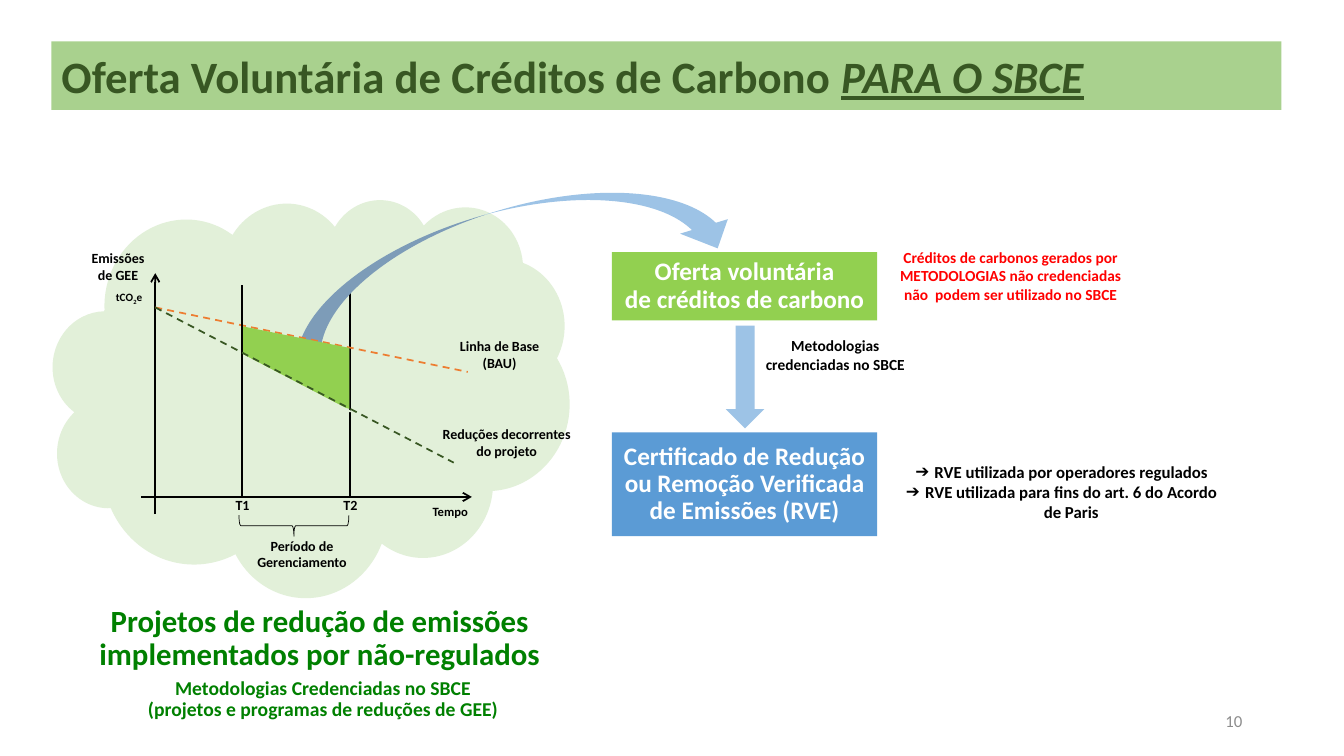
from lxml import etree
from pptx import Presentation
from pptx.dml.color import RGBColor
from pptx.enum.dml import MSO_LINE
from pptx.enum.shapes import MSO_CONNECTOR, MSO_SHAPE
from pptx.enum.text import MSO_ANCHOR, MSO_AUTO_SIZE, PP_ALIGN
from pptx.oxml.ns import qn
from pptx.util import Inches, Pt

LEFT, CENTER, RIGHT = PP_ALIGN.LEFT, PP_ALIGN.CENTER, PP_ALIGN.RIGHT
TOP, MIDDLE = MSO_ANCHOR.TOP, MSO_ANCHOR.MIDDLE
DASH = MSO_LINE.DASH
RECT, CLOUD, TRIANGLE = MSO_SHAPE.RECTANGLE, MSO_SHAPE.CLOUD, MSO_SHAPE.ISOSCELES_TRIANGLE
PARALLELOGRAM, BRACE = MSO_SHAPE.PARALLELOGRAM, MSO_SHAPE.LEFT_BRACE
CURVED_ARROW, DOWN_ARROW = MSO_SHAPE.CURVED_DOWN_ARROW, MSO_SHAPE.DOWN_ARROW

BLACK = RGBColor(0x00, 0x00, 0x00)
WHITE = RGBColor(0xFF, 0xFF, 0xFF)
GRAY = RGBColor(0x8C, 0x8C, 0x8C)
RED = RGBColor(0xFF, 0x00, 0x00)
ORANGE = RGBColor(0xED, 0x7D, 0x31)
GREEN = RGBColor(0x00, 0x80, 0x00)
DARK_GREEN = RGBColor(0x38, 0x57, 0x23)
BAND_GREEN = RGBColor(0xA9, 0xD1, 0x8E)
PALE_GREEN = RGBColor(0xE2, 0xF0, 0xD9)
LIME = RGBColor(0x92, 0xD0, 0x50)
BLUE = RGBColor(0x5B, 0x9B, 0xD5)
LIGHT_BLUE = RGBColor(0x9D, 0xC3, 0xE6)


def write(sp, paragraphs, size=10, color=BLACK, bold=True, align=CENTER,
          anchor=TOP, spacing=1.0, gap=0, wrap=True, bullet=None):
    """Fill a shape; a paragraph is a string or a list of (text, run format)."""
    tf = sp.text_frame
    tf.word_wrap = wrap
    tf.auto_size = MSO_AUTO_SIZE.NONE
    tf.vertical_anchor = anchor
    for i, runs in enumerate(paragraphs):
        p = tf.paragraphs[0] if i == 0 else tf.add_paragraph()
        p.alignment, p.line_spacing = align, spacing
        p.space_before = p.space_after = Pt(gap)
        if bullet:
            pPr = p._p.get_or_add_pPr()
            pPr.set("marL", str(Inches(0.19)))
            pPr.set("indent", str(-Inches(0.19)))
            etree.SubElement(pPr, qn("a:buChar"), char=bullet)
        for text, extra in ([(runs, {})] if isinstance(runs, str) else runs):
            for n, line in enumerate(text.split("\n")):
                if n:
                    p.add_line_break()
                r = p.add_run()
                r.text = line
                r.font.name, r.font.size, r.font.bold = "Calibri", Pt(size), bold
                r.font.color.rgb = color
                r.font.italic = extra.get("italic")
                r.font.underline = extra.get("underline")
                if "baseline" in extra:
                    r._r.get_or_add_rPr().set("baseline", str(extra["baseline"]))


class SlideBuilder:
    def __init__(self, prs):
        self.slide = prs.slides.add_slide(prs.slide_layouts[1])
        self.shapes = self.slide.shapes

    def placeholder(self, idx, box, paragraphs, fill=None, **fmt):
        sp = self.slide.placeholders[idx]
        sp.left, sp.top, sp.width, sp.height = map(Inches, box)
        if fill is not None:
            sp.fill.solid()
            sp.fill.fore_color.rgb = fill
        write(sp, paragraphs, **fmt)

    def text(self, box, *paragraphs, **fmt):
        write(self.shapes.add_textbox(*map(Inches, box)), paragraphs, **fmt)

    def shape(self, kind, box, fill=None, line=None, rotation=0, adj=None, text=None):
        sp = self.shapes.add_shape(kind, *map(Inches, box))
        sp.shadow.inherit = False
        sp.rotation = rotation
        if adj is not None:
            sp.adjustments[0] = adj
        if fill is None:
            sp.fill.background()
        else:
            sp.fill.solid()
            sp.fill.fore_color.rgb = fill
        if line is None:
            sp.line.fill.background()
        else:
            sp.line.color.rgb = line
            sp.line.width = Pt(0.5)
        if text:
            write(sp, [text], size=18, color=WHITE, anchor=MIDDLE, spacing=0.9)

    def line(self, x1, y1, x2, y2, color=BLACK, width=1.25, dash=None, arrow=False):
        sp = self.shapes.add_connector(MSO_CONNECTOR.STRAIGHT, *map(Inches, (x1, y1, x2, y2)))
        sp.line.color.rgb = color
        sp.line.width = Pt(width)
        if dash:
            sp.line.dash_style = dash
        if arrow:
            etree.SubElement(sp.line._get_or_add_ln(), qn("a:tailEnd"), type="arrow")
        etree.SubElement(sp._element.spPr, qn("a:effectLst"))


def main():
    prs = Presentation()
    prs.slide_width, prs.slide_height = Inches(13.33), Inches(7.5)
    s = SlideBuilder(prs)

    # Title, list of uses and slide number
    s.placeholder(0, (0.51, 0.41, 12.2, 0.68),
                  [[("Oferta Voluntária de Créditos de Carbono ", {}),
                    ("PARA O SBCE", {"italic": True, "underline": True})]],
                  fill=BAND_GREEN, size=32, color=DARK_GREEN, align=LEFT,
                  anchor=MIDDLE, gap=6)
    s.placeholder(1, (8.79, 4.53, 3.48, 0.91),
                  ["RVE utilizada por operadores regulados",
                   "RVE utilizada para fins do art. 6 do Acordo de Paris"],
                  size=12, bullet="➔")
    s.text((12.02, 6.95, 0.4, 0.4), "10", size=12, color=GRAY, bold=False,
           align=RIGHT, anchor=MIDDLE, wrap=False)

    # Cloud and its captions
    s.shape(CLOUD, (0.51, 1.92, 5.14, 4), PALE_GREEN, rotation=4.8)
    s.text((0.2, 5.96, 5.94, 0.62),
           "Projetos de redução de emissões implementados por não-regulados",
           size=22, color=GREEN, spacing=0.9)
    s.text((0.87, 6.68, 4.67, 0.5), "Metodologias Credenciadas no SBCE",
           "(projetos e programas de reduções de GEE)",
           size=14, color=GREEN, spacing=0.9)

    # Axes and period marks
    start_x, start_y, axis_y = 1.54, 3.05, 4.93
    t1_x, t2_x = 2.4, 3.47
    s.line(start_x, 5.1, start_x, 2.71, arrow=True)
    s.line(1.4, axis_y, 4.68, axis_y, arrow=True)
    s.line(t2_x, axis_y, t2_x, 2.83, width=1)
    for label, x in (("T1", t1_x), ("T2", t2_x)):
        s.text((x - 0.17, 4.88, 0.35, 0.27), label, wrap=False)
    s.shape(BRACE, (2.81, 4.67, 0.21, 1.09), line=BLACK, rotation=270)

    # Curved arrow, then the reduction area between the two trends
    s.shape(CURVED_ARROW, (2.72, 2.09, 4.59, 0.99), LIGHT_BLUE, rotation=343.1)
    s.line(start_x, start_y, 4.64, 3.69, ORANGE, dash=DASH)
    s.shape(PARALLELOGRAM, (2.52, 3.11, 0.82, 1.07), LIME, rotation=270, adj=0.264)
    s.shape(TRIANGLE, (2.4, 3.51, 1.11, 0.58), PALE_GREEN, adj=0)
    s.line(t1_x, axis_y, t1_x, 2.83, width=1)
    s.line(start_x, start_y, 4.5, 4.59, DARK_GREEN, dash=DASH)

    # Chart labels
    s.text((0.53, 2.43, 1.28, 0.44), "Emissões", "de GEE")
    s.text((1.04, 2.83, 0.48, 0.24),
           [("tCO", {}), ("2", {"baseline": -25000}), ("e", {})], size=8, wrap=False)
    s.text((4.41, 3.3, 1.09, 0.44), "Linha de Base", "(BAU)")
    s.text((4.14, 4.17, 1.77, 0.44), "Reduções decorrentes", "do projeto")
    s.text((2.42, 5.28, 1.15, 0.44), "Período de Gerenciamento")
    s.text((4.09, 4.95, 0.75, 0.25), "Tempo", size=9)

    # Flow from voluntary offer to certificate
    s.shape(RECT, (6.07, 2.5, 2.63, 0.68), LIME,
            text="Oferta voluntária\nde créditos de carbono")
    s.shape(DOWN_ARROW, (7.2, 3.23, 0.38, 1.02), LIGHT_BLUE)
    s.shape(RECT, (6.07, 4.29, 2.63, 1.03), BLUE,
            text="Certificado de Redução ou Remoção Verificada de Emissões (RVE)")
    s.text((7.39, 3.29, 1.79, 0.47), "Metodologias credenciadas no SBCE", size=11)
    s.text((8.71, 2.41, 2.63, 0.66),
           "Créditos de carbonos gerados por METODOLOGIAS não credenciadas "
           "não  podem ser utilizado no SBCE", size=11, color=RED)

    prs.save("out.pptx")


if __name__ == "__main__":
    main()
